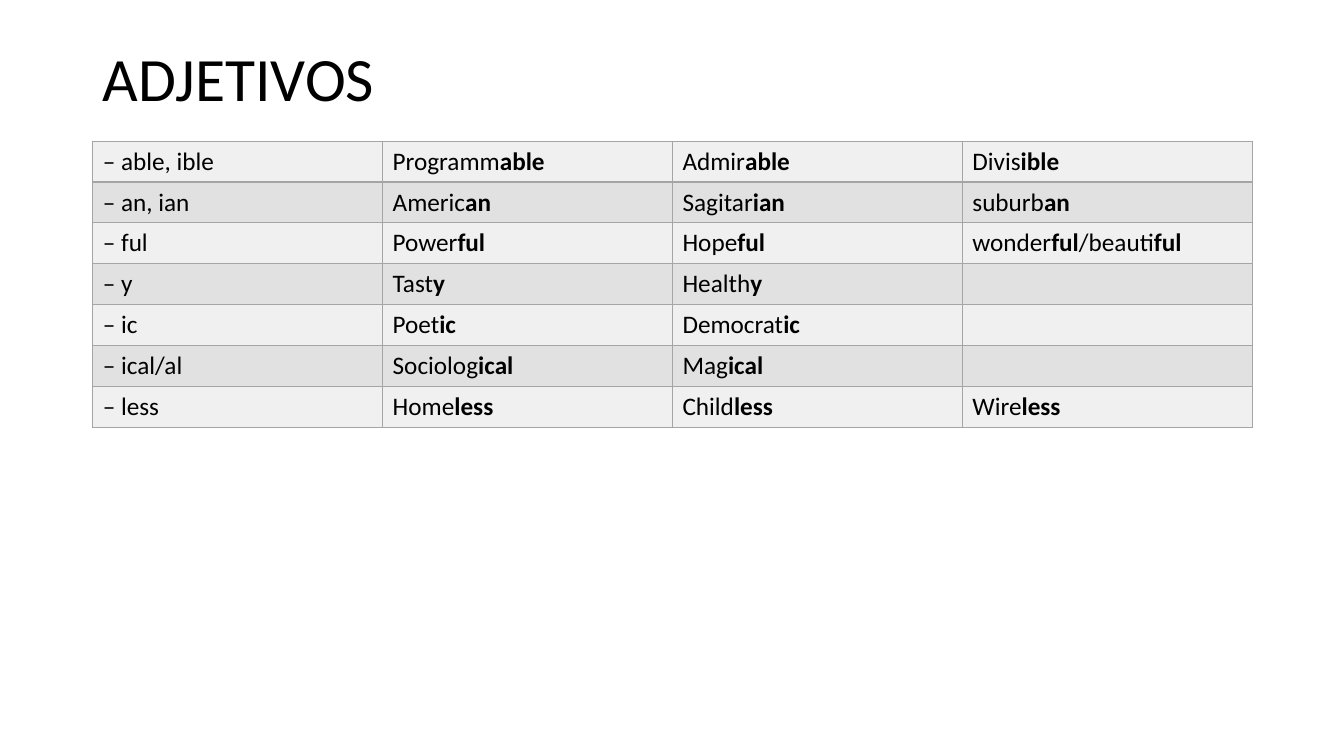
"""Build the ADJETIVOS slide: a title above a table of adjective suffixes."""
from lxml.etree import SubElement
from pptx import Presentation
from pptx.dml.color import RGBColor
from pptx.enum.text import MSO_ANCHOR, MSO_AUTO_SIZE, PP_ALIGN
from pptx.oxml.ns import qn
from pptx.util import Inches, Pt

BLACK = RGBColor(0x00, 0x00, 0x00)
LIGHT = RGBColor(0xF0, 0xF0, 0xF0)
DARK = RGBColor(0xE1, 0xE1, 0xE1)
BORDER = RGBColor(0xA5, 0xA5, 0xA5)
FONT = "Calibri"

# Text between asterisks is bold.
ROWS = [
    ["– able, ible", "Programm*able*", "Admir*able*", "Divis*ible*"],
    ["– an, ian", "Americ*an*", "Sagitar*ian*", "suburb*an*"],
    ["– ful", "Power*ful*", "Hope*ful*", "wonder*ful*/beauti*ful*"],
    ["– y", "Tast*y*", "Health*y*", ""],
    ["– ic", "Poet*ic*", "Democrat*ic*", ""],
    ["– ical/al", "Sociolog*ical*", "Mag*ical*", ""],
    ["– less", "Home*less*", "Child*less*", "Wire*less*"],
]


def add_run(p, text, size, bold=False):
    r = p.add_run()
    r.text = text
    for name, value in {"name": FONT, "size": Pt(size), "bold": bold}.items():
        setattr(r.font, name, value)
    r.font.color.rgb = BLACK


def add_borders(cell):
    tcPr = cell._tc.get_or_add_tcPr()
    for side in ("lnL", "lnR", "lnT", "lnB"):
        ln = SubElement(tcPr, qn(f"a:{side}"), w=str(Pt(1)))
        fill = SubElement(ln, qn("a:solidFill"))
        SubElement(fill, qn("a:srgbClr"), val=str(BORDER))


prs = Presentation()
prs.slide_width, prs.slide_height = Inches(13.33), Inches(7.5)
s = prs.slides.add_slide(prs.slide_layouts[5])

title = s.shapes.title
title.left, title.top = Inches(0.92), Inches(0.4)
title.width, title.height = Inches(11.5), Inches(0.82)
tf = title.text_frame
tf.auto_size = MSO_AUTO_SIZE.NONE
tf.vertical_anchor = MSO_ANCHOR.MIDDLE
p = tf.paragraphs[0]
p.alignment = PP_ALIGN.LEFT
p.line_spacing = 0.9
add_run(p, "ADJETIVOS", 44)

table = s.shapes.add_table(len(ROWS), len(ROWS[0]), Inches(0.92), Inches(1.4),
                           Inches(11.5), Inches(2.84)).table
table.first_row = False
for i, row in enumerate(ROWS):
    for j, text in enumerate(row):
        cell = table.cell(i, j)
        add_borders(cell)
        cell.fill.solid()
        cell.fill.fore_color.rgb = DARK if i % 2 else LIGHT
        p = cell.text_frame.paragraphs[0]
        p.font.size = Pt(18)
        for k, part in enumerate(text.split("*")):
            if part:
                add_run(p, part, 18, bold=k % 2 == 1)

prs.save("out.pptx")
